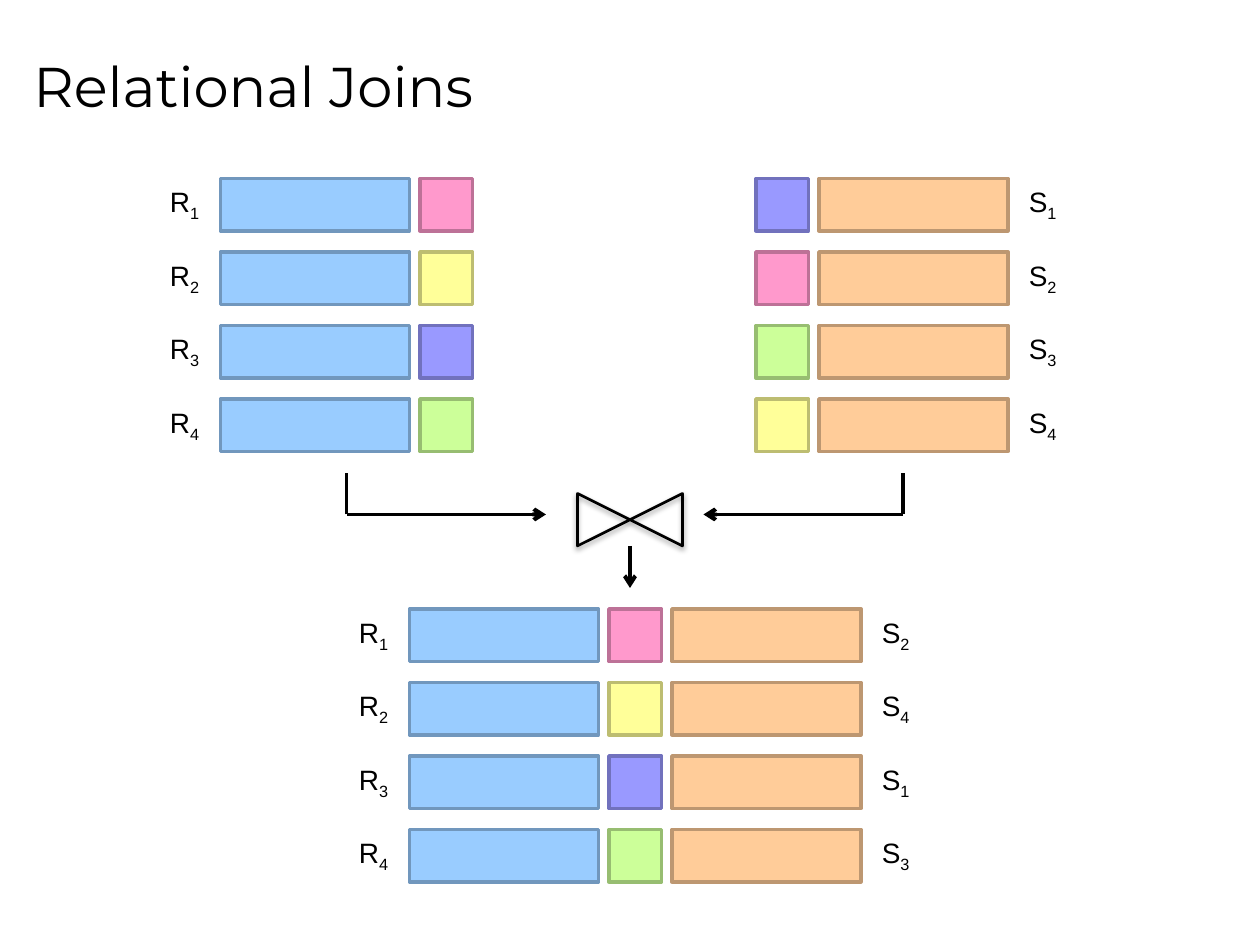
from dataclasses import dataclass

from lxml import etree
from pptx import Presentation
from pptx.dml.color import RGBColor
from pptx.enum.shapes import MSO_CONNECTOR, MSO_SHAPE
from pptx.enum.text import MSO_ANCHOR, MSO_AUTO_SIZE
from pptx.oxml import parse_xml
from pptx.oxml.ns import nsdecls, qn
from pptx.shapes.autoshape import Shape
from pptx.slide import Slide
from pptx.util import Emu, Pt

RECTANGLE = MSO_SHAPE.RECTANGLE
COLLATE = MSO_SHAPE.FLOWCHART_COLLATE
STRAIGHT = MSO_CONNECTOR.STRAIGHT
MIDDLE = MSO_ANCHOR.MIDDLE
FIT_SHAPE = MSO_AUTO_SIZE.SHAPE_TO_FIT_TEXT

EMU_PER_PX = 7620  # 120 px to the inch


@dataclass(frozen=True)
class Paint:
    fill: str
    edge: str


@dataclass(frozen=True)
class Theme:
    ink: str = "000000"
    title_font: str = "Montserrat"
    label_font: str = "Arial"
    title_size: int = 32
    label_size: int = 16
    box_line: float = 2
    join_line: float = 1.5
    arrow_line: float = 2.25
    r_tuple: Paint = Paint("99CCFF", "7197BD")
    s_tuple: Paint = Paint("FFCC99", "BD9771")
    pink: Paint = Paint("FF99CC", "BD7197")
    yellow: Paint = Paint("FFFF99", "BDBD71")
    violet: Paint = Paint("9999FF", "7171BD")
    green: Paint = Paint("CCFF99", "97BD71")


THEME = Theme()

# Grid of the relations, in px
BOX, TUPLE_WIDTH, ROW_PITCH = 50, 180, 70
R_LABEL_SHIFT, S_LABEL_SHIFT = -60, 188
R_LABEL_WIDTH, S_LABEL_WIDTH, LABEL_HEIGHT = 54, 52, 44


@dataclass(frozen=True)
class Row:
    """One tuple, or two joined ones, with the join key they carry."""
    key: Paint
    r: str = ""
    s: str = ""


@dataclass(frozen=True)
class Relation:
    top: int
    key_left: int
    rows: tuple[Row, ...]


@dataclass(frozen=True)
class Flow:
    start: tuple[int, int]
    end: tuple[int, int]
    arrow: bool = True


RELATIONS = (
    Relation(170, 400, (Row(THEME.pink, r="1"), Row(THEME.yellow, r="2"),
                        Row(THEME.violet, r="3"), Row(THEME.green, r="4"))),
    Relation(170, 720, (Row(THEME.violet, s="1"), Row(THEME.pink, s="2"),
                        Row(THEME.green, s="3"), Row(THEME.yellow, s="4"))),
    Relation(580, 580, (Row(THEME.pink, "1", "2"), Row(THEME.yellow, "2", "4"),
                        Row(THEME.violet, "3", "1"), Row(THEME.green, "4", "3"))),
)

FLOWS = (
    Flow((330, 490), (520, 490)),
    Flow((330, 490), (330, 450), arrow=False),
    Flow((860, 490), (670, 490)),
    Flow((860, 490), (860, 450), arrow=False),
    Flow((600, 520), (600, 560)),
)


def px(*lengths: int) -> list[Emu]:
    return [Emu(length * EMU_PER_PX) for length in lengths]


def apply(target: object, values: dict[str, object]) -> None:
    for name, value in values.items():
        setattr(target, name, value)


def add_text(slide: Slide, frame: tuple[int, ...], text: str, font: str, size: int,
             layout: dict[str, object], subscript: str = "") -> None:
    text_frame = slide.shapes.add_textbox(*px(*frame)).text_frame
    apply(text_frame, layout)
    paragraph = text_frame.paragraphs[0]
    for part in filter(None, (text, subscript)):
        run = paragraph.add_run()
        apply(run, {"text": part})
        apply(run.font, {"name": font, "size": Pt(size)})
        run.font.color.rgb = RGBColor.from_string(THEME.ink)
    if subscript:
        run.font._element.set("baseline", "-25000")


def add_label(slide: Slide, left: int, top: int, width: int,
              relation: str, number: str) -> None:
    add_text(slide, (left, top, width, LABEL_HEIGHT), relation, THEME.label_font,
             THEME.label_size, {"word_wrap": False, "auto_size": FIT_SHAPE}, number)


def add_box(slide: Slide, left: int, top: int, width: int, paint: Paint) -> Shape:
    box = slide.shapes.add_shape(RECTANGLE, *px(left, top, width, BOX))
    box.shadow.inherit = False
    box.fill.solid()
    box.fill.fore_color.rgb = RGBColor.from_string(paint.fill)
    box.line.color.rgb = RGBColor.from_string(paint.edge)
    box.line.width = Pt(THEME.box_line)
    return box


def add_relation(slide: Slide, relation: Relation) -> None:
    gap = 10
    r_left = relation.key_left - gap - TUPLE_WIDTH
    s_left = relation.key_left + BOX + gap
    for index, row in enumerate(relation.rows):
        top = relation.top + index * ROW_PITCH
        if row.r:
            add_box(slide, r_left, top, TUPLE_WIDTH, THEME.r_tuple)
            add_label(slide, r_left + R_LABEL_SHIFT, top, R_LABEL_WIDTH, "R", row.r)
        if row.s:
            add_box(slide, s_left, top, TUPLE_WIDTH, THEME.s_tuple)
            add_label(slide, s_left + S_LABEL_SHIFT, top, S_LABEL_WIDTH, "S", row.s)
        add_box(slide, relation.key_left, top, BOX, row.key)


def add_flow(slide: Slide, flow: Flow) -> None:
    connector = slide.shapes.add_connector(STRAIGHT, *px(*flow.start, *flow.end))
    connector.line.color.rgb = RGBColor.from_string(THEME.ink)
    connector.line.width = Pt(THEME.arrow_line)
    if flow.arrow:
        etree.SubElement(connector.line._get_or_add_ln(), qn("a:tailEnd"), type="arrow")
    etree.SubElement(connector._element.spPr, qn("a:effectLst"))


def add_join_symbol(slide: Slide) -> None:
    join = slide.shapes.add_shape(COLLATE, *px(575, 445, 50, 100))
    join.rotation = 90
    join.fill.background()
    join.line.color.rgb = RGBColor.from_string(THEME.ink)
    join.line.width = Pt(THEME.join_line)
    # Soft shadow straight below the outline
    join._element.spPr.append(parse_xml(
        f'<a:effectLst {nsdecls("a")}>'
        '<a:outerShdw blurRad="40000" dist="20000" dir="5400000" rotWithShape="0">'
        f'<a:srgbClr val="{THEME.ink}"><a:alpha val="38000"/></a:srgbClr>'
        '</a:outerShdw></a:effectLst>'))


def main() -> None:
    presentation = Presentation()
    slide_width, slide_height = px(1200, 900)
    apply(presentation, {"slide_width": slide_width, "slide_height": slide_height})
    slide = presentation.slides.add_slide(presentation.slide_layouts[6])

    # Title
    add_text(slide, (20, 14, 1140, 134), "Relational Joins", THEME.title_font,
             THEME.title_size, {"word_wrap": True, "vertical_anchor": MIDDLE})

    # Join operator with its inputs and output
    add_join_symbol(slide)
    for flow in FLOWS:
        add_flow(slide, flow)

    # Input relations and the joined result
    for relation in RELATIONS:
        add_relation(slide, relation)

    presentation.save("out.pptx")


if __name__ == "__main__":
    main()
